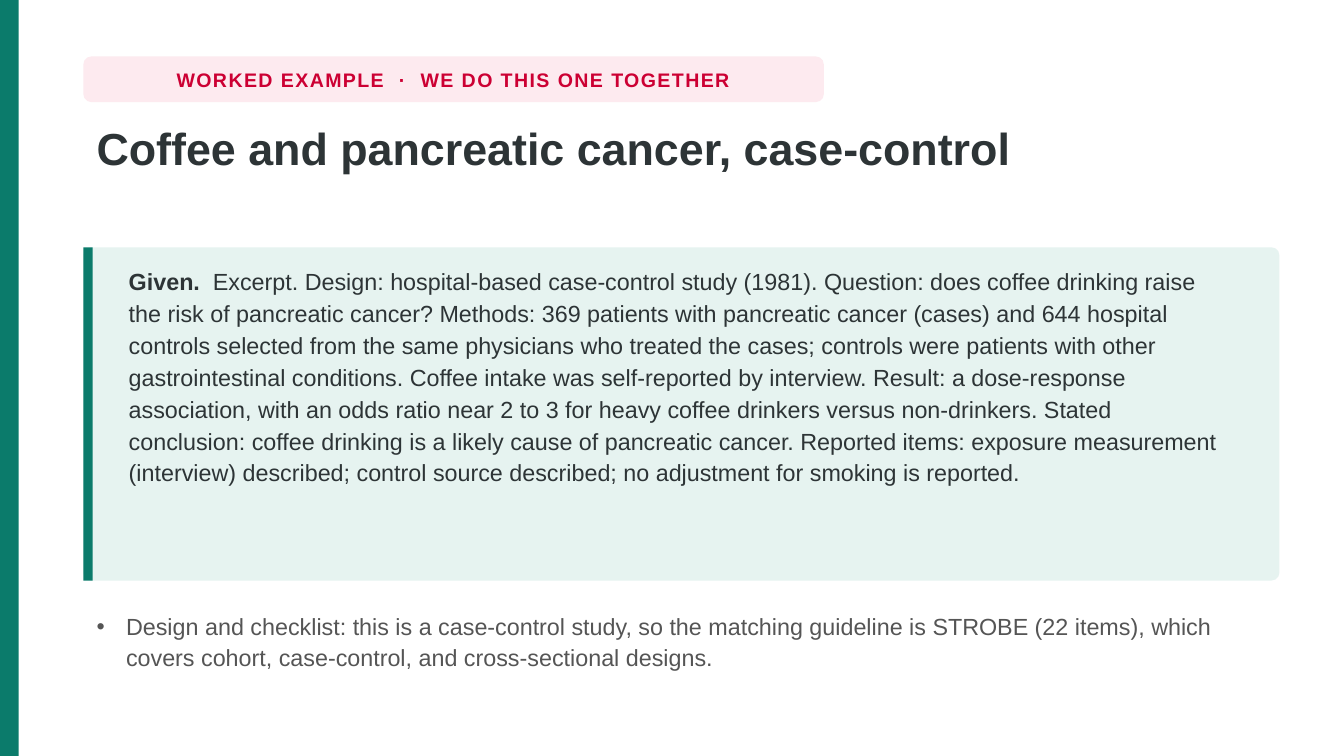
from dataclasses import dataclass

from lxml import etree
from pptx import Presentation
from pptx.dml.color import RGBColor
from pptx.enum.shapes import MSO_SHAPE
from pptx.enum.text import MSO_ANCHOR, PP_ALIGN
from pptx.oxml.ns import qn
from pptx.slide import Slide
from pptx.text.text import TextFrame
from pptx.util import Inches, Pt

RECT = MSO_SHAPE.RECTANGLE
ROUNDED = MSO_SHAPE.ROUNDED_RECTANGLE
MIDDLE = MSO_ANCHOR.MIDDLE
CENTER = PP_ALIGN.CENTER

COLORS = {
    "green": "0B7B6B",
    "mint": "E6F3F0",
    "blush": "FDEAEF",
    "crimson": "CC0033",
    "ink": "2D3436",
    "gray": "555555",
}
FONT = "Arial"
SLIDE_WIDTH = 10
SLIDE_HEIGHT = SLIDE_WIDTH * 9 / 16
MARGIN, CONTENT_WIDTH = 0.62, 8.9
CASE_TOP, CASE_HEIGHT = 1.84, 2.48
BULLET_INDENT = 0.22


@dataclass(frozen=True)
class Box:
    left: float
    top: float
    width: float
    height: float

    def lengths(self) -> tuple[Inches, ...]:
        return tuple(Inches(n) for n in (self.left, self.top, self.width, self.height))


@dataclass(frozen=True)
class Panel:
    box: Box
    color: str
    rounding: float = 0


@dataclass(frozen=True)
class Passage:
    box: Box
    text: str
    size: float
    color: str
    bold: bool = False
    line_spacing: float = 1.0
    lead: str = ""


BADGE_BOX = Box(MARGIN, 0.42, 5.51, 0.34)

PANELS = [
    Panel(Box(0, 0, 0.14, SLIDE_HEIGHT), "green"),
    Panel(BADGE_BOX, "blush", 0.176),
    Panel(Box(MARGIN, CASE_TOP, CONTENT_WIDTH, CASE_HEIGHT), "mint", 0.024),
    Panel(Box(MARGIN, CASE_TOP, 0.07, CASE_HEIGHT), "green"),
]

BADGE = Passage(
    BADGE_BOX, "WORKED EXAMPLE  ·  WE DO THIS ONE TOGETHER", 10.5, "crimson", bold=True
)
TITLE = Passage(
    Box(MARGIN, 0.84, CONTENT_WIDTH, 1.02),
    "Coffee and pancreatic cancer, case-control",
    24, "ink", bold=True, line_spacing=1.02,
)
CASE = Passage(
    Box(0.86, 1.91, 8.4, 2.34),
    "Excerpt. Design: hospital-based case-control study (1981). Question: does coffee "
    "drinking raise the risk of pancreatic cancer? Methods: 369 patients with pancreatic "
    "cancer (cases) and 644 hospital controls selected from the same physicians who treated "
    "the cases; controls were patients with other gastrointestinal conditions. Coffee intake "
    "was self-reported by interview. Result: a dose-response association, with an odds ratio "
    "near 2 to 3 for heavy coffee drinkers versus non-drinkers. Stated conclusion: coffee "
    "drinking is a likely cause of pancreatic cancer. Reported items: exposure measurement "
    "(interview) described; control source described; no adjustment for smoking is reported.",
    12.5, "ink", line_spacing=1.14, lead="Given.  ",
)
CHECKLIST = Passage(
    Box(MARGIN, 4.48, CONTENT_WIDTH, 0.71),
    "Design and checklist: this is a case-control study, so the matching guideline is STROBE "
    "(22 items), which covers cohort, case-control, and cross-sectional designs.",
    12.5, "gray", line_spacing=1.12,
)


def rgb(name: str) -> RGBColor:
    return RGBColor.from_string(COLORS[name])


def draw_panel(slide: Slide, panel: Panel) -> None:
    kind = ROUNDED if panel.rounding else RECT
    shape = slide.shapes.add_shape(kind, *panel.box.lengths())
    shape.shadow.inherit = False
    shape.fill.solid()
    shape.fill.fore_color.rgb = rgb(panel.color)
    shape.line.fill.background()
    if panel.rounding:
        shape.adjustments[0] = panel.rounding


def draw_passage(slide: Slide, passage: Passage, bulleted: bool = False) -> TextFrame:
    frame = slide.shapes.add_textbox(*passage.box.lengths()).text_frame
    frame.word_wrap = True
    paragraph = frame.paragraphs[0]
    paragraph.line_spacing = passage.line_spacing
    if bulleted:
        add_bullet(frame)
    paragraph.font.name = FONT
    paragraph.font.size = Pt(passage.size)
    paragraph.font.color.rgb = rgb(passage.color)
    paragraph.font.bold = passage.bold
    if passage.lead:
        lead = paragraph.add_run()
        lead.text = passage.lead
        lead.font.bold = True
    paragraph.add_run().text = passage.text
    return frame


def add_bullet(frame: TextFrame) -> None:
    properties = frame.paragraphs[0]._p.get_or_add_pPr()
    indent = Inches(BULLET_INDENT)
    properties.set("marL", str(indent))
    properties.set("indent", str(-indent))
    etree.SubElement(properties, qn("a:buSzPct")).set("val", "100000")
    etree.SubElement(properties, qn("a:buFont")).set("typeface", FONT)
    etree.SubElement(properties, qn("a:buChar")).set("char", "•")


def draw_badge(slide: Slide) -> None:
    frame = draw_passage(slide, BADGE)
    frame.word_wrap = False
    frame.vertical_anchor = MIDDLE
    label = frame.paragraphs[0]
    label.alignment = CENTER
    label.runs[0]._r.get_or_add_rPr().set("spc", "80")


def main() -> None:
    presentation = Presentation()
    presentation.slide_width = Inches(SLIDE_WIDTH)
    presentation.slide_height = Inches(SLIDE_HEIGHT)
    slide = presentation.slides.add_slide(presentation.slide_layouts[6])
    for panel in PANELS:
        draw_panel(slide, panel)
    draw_badge(slide)
    draw_passage(slide, TITLE)
    draw_passage(slide, CASE)
    draw_passage(slide, CHECKLIST, bulleted=True)
    presentation.save("out.pptx")


if __name__ == "__main__":
    main()
